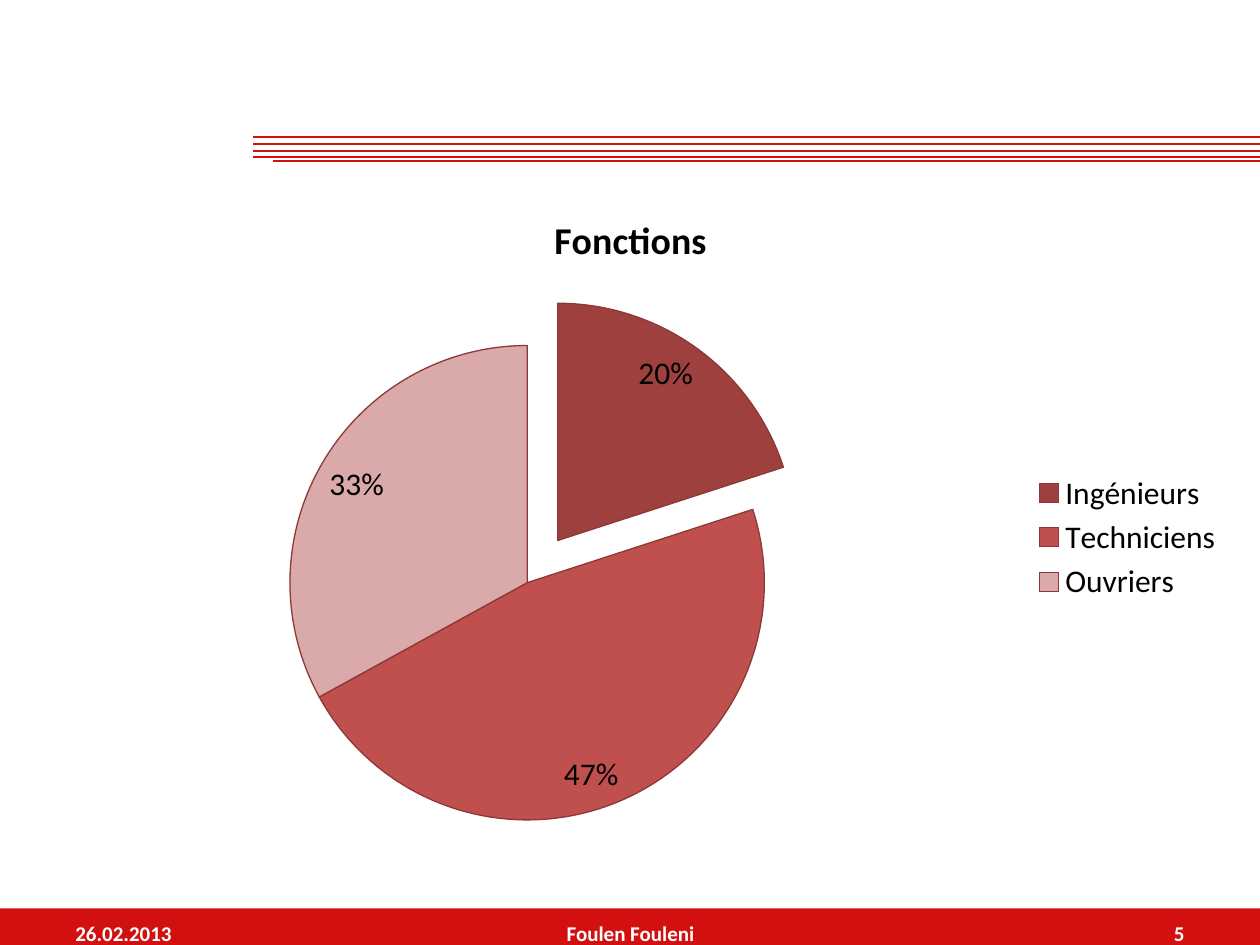
from dataclasses import dataclass

from lxml.etree import SubElement
from pptx import Presentation
from pptx.chart.data import CategoryChartData
from pptx.dml.color import RGBColor
from pptx.enum.chart import XL_CHART_TYPE, XL_LABEL_POSITION, XL_LEGEND_POSITION
from pptx.enum.shapes import MSO_CONNECTOR, MSO_SHAPE
from pptx.enum.text import MSO_ANCHOR, PP_ALIGN
from pptx.oxml import parse_xml
from pptx.oxml.ns import nsdecls, qn
from pptx.util import Inches, Pt


@dataclass(frozen=True)
class Theme:
    """Colours, font and type sizes."""
    font: str = "Calibri"
    red: str = "D21010"
    white: str = "FFFFFF"
    black: str = "000000"
    edge: str = "8C3836"
    slices: tuple = ("9E413E", "C0504D", "D9AAA9")
    small: float = 12
    body: float = 18
    title: float = 21.6
    rule: float = 1.25
    hair: float = 0.75


class Deck:
    """Draws on one slide with a grid of 100 columns by 75 rows."""

    def __init__(self, theme):
        """Open a blank slide."""
        self.theme = theme
        self.file = Presentation()
        self.file.slide_width, self.file.slide_height = Inches(10), Inches(7.5)
        self.slide = self.file.slides.add_slide(self.file.slide_layouts[6])

    def grid(self, *cells):
        """Turn columns or rows into lengths."""
        width = self.file.slide_width
        return [round(cell * width / 100) for cell in cells]

    def style(self, font, size, color, bold=False):
        """Set the look of a font."""
        font.name, font.size, font.bold = self.theme.font, Pt(size), bold
        font.color.rgb = RGBColor.from_string(color)

    def band(self, *area):
        """Add a plain red bar."""
        shape = self.slide.shapes.add_shape(MSO_SHAPE.RECTANGLE, *self.grid(*area))
        shape.shadow.inherit = False
        shape.fill.solid()
        shape.fill.fore_color.rgb = RGBColor.from_string(self.theme.red)
        shape.line.fill.background()

    def rule(self, left, top, width):
        """Add a level red line."""
        ends = self.grid(left, top, left + width, top)
        line = self.slide.shapes.add_connector(MSO_CONNECTOR.STRAIGHT, *ends)
        line.line.color.rgb = RGBColor.from_string(self.theme.red)
        line.line.width = Pt(self.theme.rule)
        SubElement(line.element.spPr, qn("a:effectLst"))

    def label(self, text, align, *area):
        """Add a footer text."""
        frame = self.slide.shapes.add_textbox(*self.grid(*area)).text_frame
        frame.word_wrap = True
        frame.vertical_anchor = MSO_ANCHOR.MIDDLE
        para = frame.paragraphs[0]
        para.alignment = align
        run = para.add_run()
        run.text = text
        self.style(run.font, self.theme.small, self.theme.white, True)

    def pie(self, title, parts, burst, *area):
        """Add a pie chart with its first slice pulled out."""
        theme = self.theme
        data = CategoryChartData()
        data.categories = list(parts)
        data.add_series(title, list(parts.values()))
        chart = self.slide.shapes.add_chart(
            XL_CHART_TYPE.PIE, *self.grid(*area), data).chart
        self.style(chart.font, theme.body, theme.black)
        chart.has_title = True
        run = chart.chart_title.text_frame.paragraphs[0].add_run()
        run.text = title
        self.style(run.font, theme.title, theme.black, True)
        chart.has_legend = True
        chart.legend.position = XL_LEGEND_POSITION.RIGHT
        chart.legend.include_in_layout = False

        plot = chart.plots[0]
        plot.vary_by_categories = True
        plot.has_data_labels = True
        labels = plot.data_labels
        labels.show_percentage, labels.show_value = True, False
        labels.number_format, labels.number_format_is_linked = "0%", False
        labels.position = XL_LABEL_POSITION.INSIDE_END
        self.style(labels.font, theme.body, theme.black)

        points = plot.series[0].points
        for spot, color in enumerate(theme.slices):
            look = points[spot].format
            look.fill.solid()
            look.fill.fore_color.rgb = RGBColor.from_string(color)
            look.line.color.rgb = RGBColor.from_string(theme.edge)
            look.line.width = Pt(theme.hair)
        first = chart.element.find(".//" + qn("c:dPt"))
        first.find(qn("c:spPr")).addprevious(
            parse_xml(f'<c:explosion {nsdecls("c")} val="{burst}"/>'))


def main():
    """Build the slide."""
    deck = Deck(Theme())
    deck.band(-1.2, 72.1, 102.9, 3.9)
    for step in range(4):
        deck.rule(20.1, 10.9 + 0.53 * step, 81.1)
    deck.rule(21.7, 12.8, 81.1)
    parts = {"Ingénieurs": 20, "Techniciens": 47, "Ouvriers": 33}
    deck.pie("Fonctions", parts, 22, 2, 14.7, 96.1, 55.9)
    for text, align, left, width in (
            ("26.02.2013", PP_ALIGN.LEFT, 5, 23.3),
            ("Foulen Fouleni", PP_ALIGN.CENTER, 34.2, 31.7),
            ("5", PP_ALIGN.RIGHT, 71.7, 23.3)):
        deck.label(text, align, left, 72.1, width, 4)
    deck.file.save("out.pptx")


if __name__ == "__main__":
    main()
